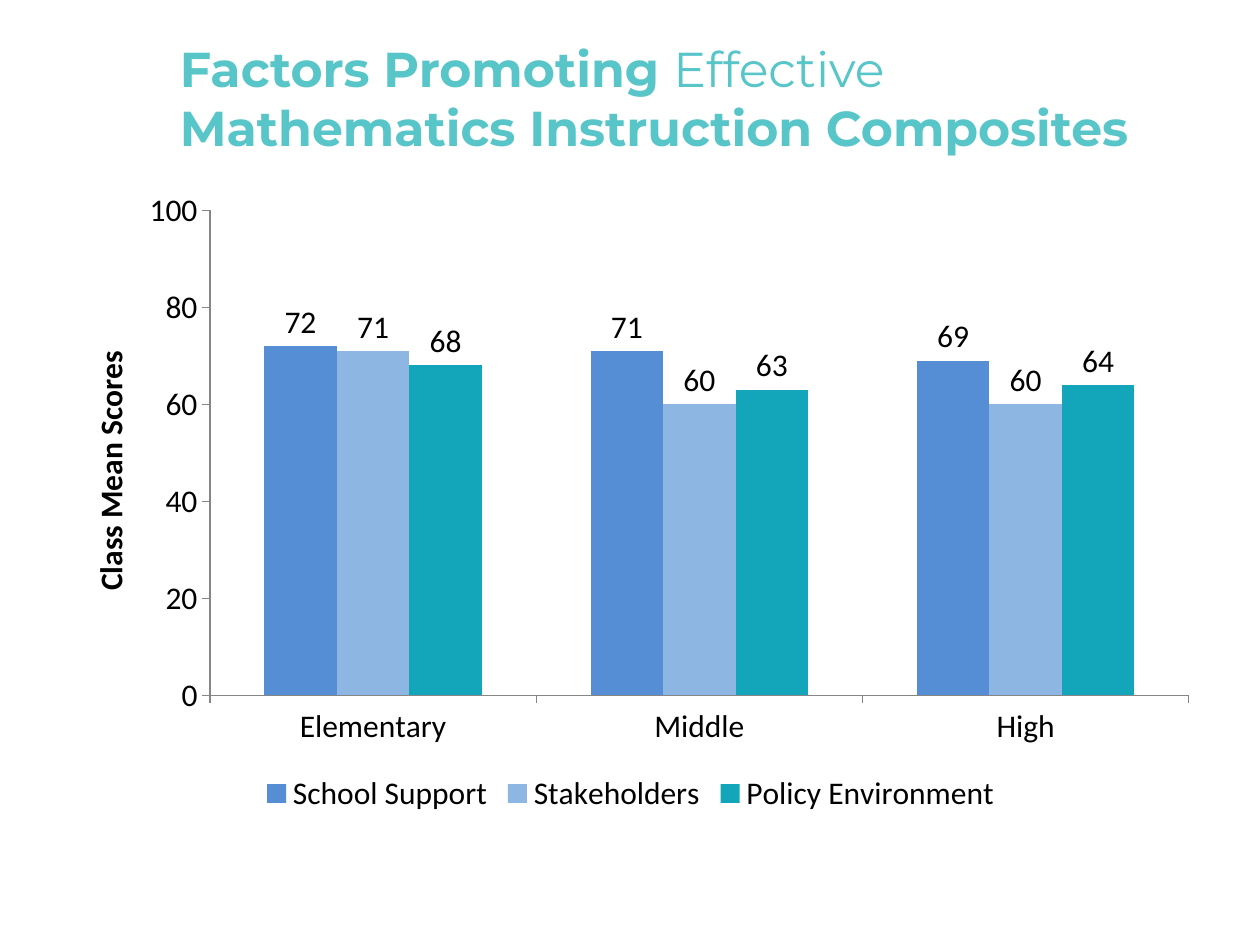
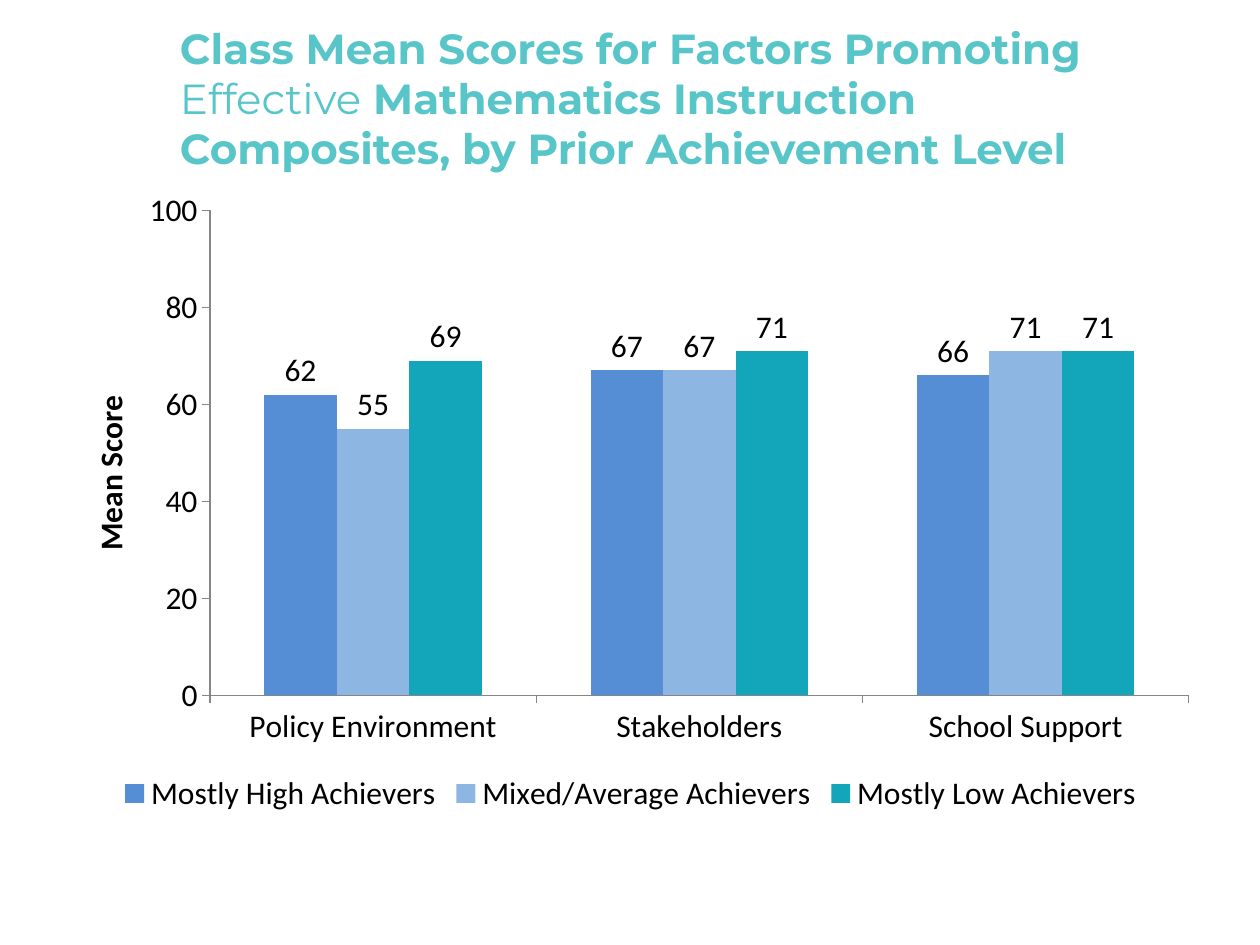
from lxml import etree
from pptx import Presentation
from pptx.chart.data import CategoryChartData
from pptx.dml.color import RGBColor
from pptx.enum.chart import XL_CHART_TYPE, XL_LABEL_POSITION, XL_LEGEND_POSITION, XL_TICK_MARK
from pptx.enum.text import MSO_ANCHOR
from pptx.oxml.ns import qn
from pptx.util import Inches, Pt

COLUMNS = XL_CHART_TYPE.COLUMN_CLUSTERED
ABOVE = XL_LABEL_POSITION.OUTSIDE_END
BOTTOM = XL_LEGEND_POSITION.BOTTOM
OUTSIDE = XL_TICK_MARK.OUTSIDE
NO_TICK = XL_TICK_MARK.NONE
MIDDLE = MSO_ANCHOR.MIDDLE

TEAL, BLACK, GREY = "58C5C9", "000000", "868686"
BARS = ["558ED5", "8EB6E3", "13A6BA"]


def color(code):
    return RGBColor.from_string(code)


def add_title(slide, parts, size):
    """Write the heading from (text, bold) parts."""
    box = slide.shapes.add_textbox(Inches(1.33), Inches(0.3), Inches(8.17), Inches(0.95))
    frame = box.text_frame
    frame.word_wrap = True
    frame.vertical_anchor = MIDDLE
    for text, bold in parts:
        run = frame.paragraphs[0].add_run()
        run.text = text
        run.font.name = "Montserrat"
        run.font.size = Pt(size)
        run.font.bold = bold
        run.font.color.rgb = color(TEAL)


def set_layout(parent, index, **values):
    """Fix the place of a chart part, as fractions of the chart."""
    for old in parent.findall(qn("c:layout")):
        parent.remove(old)
    layout = etree.Element(qn("c:layout"))
    manual = etree.SubElement(layout, qn("c:manualLayout"))
    for tag, value in values.items():
        etree.SubElement(manual, qn("c:" + tag)).set("val", str(value))
    parent.insert(index, layout)


def style_axis(axis):
    axis.has_major_gridlines = False
    axis.major_tick_mark = OUTSIDE
    axis.minor_tick_mark = NO_TICK
    axis.format.line.color.rgb = color(GREY)
    axis.format.line.width = Pt(0.75)


def name_axis(axis, text, top):
    title = axis.axis_title
    title.text_frame.text = text
    font = title.text_frame.paragraphs[0].runs[0].font
    font.name = "Calibri"
    font.size = Pt(18)
    font.bold = True
    font.color.rgb = color(BLACK)
    set_layout(title._element, 1, xMode="edge", yMode="edge", x=0.03, y=top)


def add_bars(slide, label, top, groups, series):
    data = CategoryChartData()
    data.categories = groups
    for name, scores in series:
        data.add_series(name, scores)
    chart = slide.shapes.add_chart(
        COLUMNS, Inches(0.38), Inches(1.42), Inches(9.25), Inches(5.08), data).chart
    chart.has_title = False
    chart.font.name = "Calibri"
    chart.font.size = Pt(18)
    chart.font.color.rgb = color(BLACK)
    chart.has_legend = True
    chart.legend.position = BOTTOM
    chart.legend.include_in_layout = False

    style_axis(chart.category_axis)
    scale = chart.value_axis
    style_axis(scale)
    scale.minimum_scale = 0
    scale.maximum_scale = 100
    scale.major_unit = 20
    name_axis(scale, label, top)

    plot = chart.plots[0]
    plot.gap_width = 150
    plot.overlap = 0
    plot.vary_by_categories = False
    plot.has_data_labels = True
    plot.data_labels.show_value = True
    plot.data_labels.position = ABOVE
    for bar, code in zip(plot.series, BARS):
        bar.format.fill.solid()
        bar.format.fill.fore_color.rgb = color(code)
    area = chart._chartSpace.find(".//" + qn("c:plotArea"))
    set_layout(area, 0, layoutTarget="inner", xMode="edge", yMode="edge",
               x=0.139, y=0.049, w=0.84, h=0.758)


def main():
    deck = Presentation()
    deck.slide_width, deck.slide_height = Inches(10), Inches(7.5)
    blank = deck.slide_layouts[6]

    slide = deck.slides.add_slide(blank)
    add_title(slide, [("Factors Promoting ", True), ("Effective ", False),
                      ("Mathematics Instruction Composites", True)], 28)
    add_bars(slide, "Class Mean Scores", 0.26, ["Elementary", "Middle", "High"],
             [("School Support", [72, 71, 69]),
              ("Stakeholders", [71, 60, 60]),
              ("Policy Environment", [68, 63, 64])])

    slide = deck.slides.add_slide(blank)
    add_title(slide, [("Class Mean Scores for Factors Promoting ", True), ("Effective", False),
                      (" Mathematics Instruction Composites, by Prior Achievement Level", True)], 24)
    add_bars(slide, "Mean Score", 0.33,
             ["Policy Environment", "Stakeholders", "School Support"],
             [("Mostly High Achievers", [62, 67, 66]),
              ("Mixed/Average Achievers", [55, 67, 71]),
              ("Mostly Low Achievers", [69, 71, 71])])

    deck.save("out.pptx")


if __name__ == "__main__":
    main()
